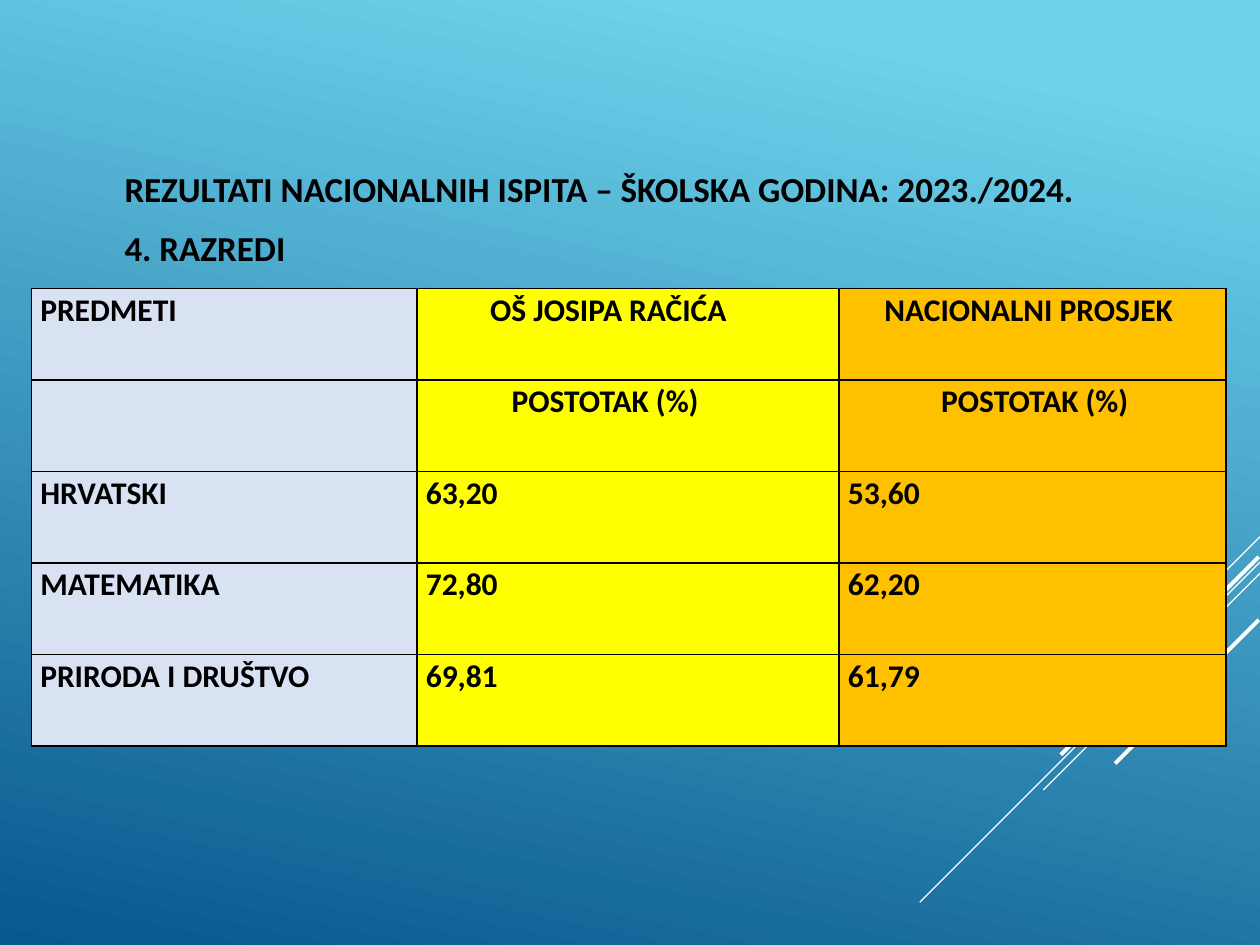
"""Build a slide with a table of national exam results."""
from lxml import etree
from pptx import Presentation
from pptx.dml.color import RGBColor
from pptx.enum import shapes, text
from pptx.oxml import ns
from pptx.util import Inches, Pt

BLACK = RGBColor(0x00, 0x00, 0x00)
WHITE = RGBColor(0xFF, 0xFF, 0xFF)
SKY = RGBColor(0x6E, 0xD2, 0xEB)
NAVY = RGBColor(0x06, 0x58, 0x8E)
FILLS = [
    RGBColor(0xD9, 0xE2, 0xF3),
    RGBColor(0xFF, 0xFF, 0x00),
    RGBColor(0xFF, 0xC0, 0x00),
]

TITLE = [
    "REZULTATI NACIONALNIH ISPITA – ŠKOLSKA GODINA: 2023./2024.",
    "4. RAZREDI",
]
ROWS = [
    ("PREDMETI", "OŠ JOSIPA RAČIĆA", "NACIONALNI PROSJEK"),
    ("", "POSTOTAK (%)", "POSTOTAK (%)"),
    ("HRVATSKI", "63,20", "53,60"),
    ("MATEMATIKA", "72,80", "62,20"),
    ("PRIRODA I DRUŠTVO", "69,81", "61,79"),
]
INDENTS = {(0, 1): 0.51, (0, 2): 0.29, (1, 1): 0.68, (1, 2): 0.74}
WIDTHS = [3.06, 3.35, 3.07]
HEIGHT = 3.63
RAYS = [
    (10, 4.26, 0.83, 0.75),
    (10, 4.46, 2.7, 0.75),
    (10, 4.55, 1.72, 0.75),
    (9.99, 4.42, 1.57, 2.25),
    (9.99, 4.92, 1.14, 2.25),
]


def style(para, size):
    para.line_spacing = 1.07
    para.space_after = Pt(8)
    font = para.font
    font.name, font.size, font.bold = "Calibri", Pt(size), True
    font.color.rgb = BLACK


def border(cell):
    props = cell._tc.get_or_add_tcPr()
    for spot, side in enumerate(("lnL", "lnR", "lnT", "lnB")):
        line = etree.Element(ns.qn("a:" + side), w=str(Pt(1)))
        fill = etree.SubElement(line, ns.qn("a:solidFill"))
        etree.SubElement(fill, ns.qn("a:srgbClr"), val=str(BLACK))
        props.insert(spot, line)


def paint(slide):
    fill = slide.background.fill
    fill.gradient()
    fill.gradient_angle = 360 - 102
    for stop, color, place in zip(fill.gradient_stops, (SKY, NAVY), (0.1, 1)):
        stop.color.rgb = color
        stop.position = place


def add_rays(slide):
    for x, y, run, width in RAYS:
        ends = [Inches(v) for v in (x, y, x - run, y + run)]
        ray = slide.shapes.add_connector(shapes.MSO_CONNECTOR.STRAIGHT, *ends)
        ray.line.color.rgb = WHITE
        ray.line.width = Pt(width)
        etree.SubElement(ray._element.spPr, ns.qn("a:effectLst"))


def add_grid(slide):
    frame = slide.shapes.add_table(
        len(ROWS), len(WIDTHS), Inches(0.25), Inches(2.29),
        Inches(sum(WIDTHS)), Inches(HEIGHT))
    table = frame.table
    table.first_row = table.horz_banding = False
    for col, width in zip(table.columns, WIDTHS):
        col.width = Inches(width)
    for r, row in enumerate(ROWS):
        for c, label in enumerate(row):
            cell = table.cell(r, c)
            cell.text = label
            cell.margin_left = Inches(0.07 + INDENTS.get((r, c), 0))
            cell.margin_right = Inches(0.07)
            cell.margin_top = cell.margin_bottom = 0
            cell.fill.solid()
            cell.fill.fore_color.rgb = FILLS[c]
            border(cell)
            style(cell.text_frame.paragraphs[0], 18)


def add_title(slide):
    box = slide.shapes.add_textbox(
        Inches(0.89), Inches(1.26), Inches(8.13), Inches(0.92))
    frame = box.text_frame
    frame.word_wrap = True
    frame.auto_size = text.MSO_AUTO_SIZE.SHAPE_TO_FIT_TEXT
    frame.text = "\n".join(TITLE)
    for para in frame.paragraphs:
        style(para, 20)


def main():
    deck = Presentation()
    deck.slide_width, deck.slide_height = Inches(10), Inches(7.5)
    slide = deck.slides.add_slide(deck.slide_layouts[6])
    paint(slide)
    add_rays(slide)
    add_grid(slide)
    add_title(slide)
    deck.save("out.pptx")


if __name__ == "__main__":
    main()
